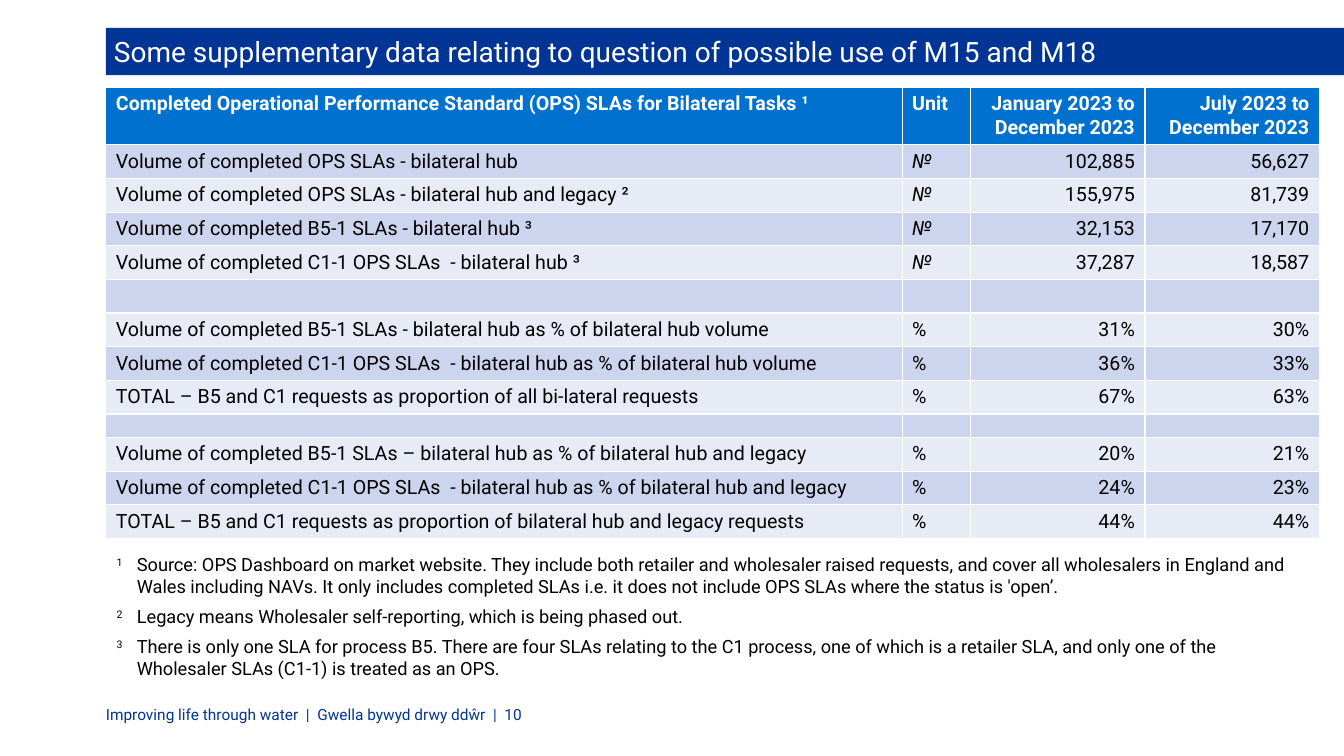
from pptx import Presentation
from pptx.dml.color import RGBColor
from pptx.enum.shapes import MSO_SHAPE
from pptx.enum.text import MSO_ANCHOR, PP_ALIGN
from pptx.oxml.ns import qn
from pptx.util import Pt
from lxml import etree

RECTANGLE = MSO_SHAPE.RECTANGLE
TOP, MIDDLE = MSO_ANCHOR.TOP, MSO_ANCHOR.MIDDLE
LEFT, RIGHT, JUSTIFY = PP_ALIGN.LEFT, PP_ALIGN.RIGHT, PP_ALIGN.JUSTIFY

# Content
TITLE = "Some supplementary data relating to question of possible use of M15 and M18"
HEADER = ("Completed Operational Performance Standard (OPS) SLAs for Bilateral Tasks ¹",
          "Unit", "January 2023 to December 2023", "July 2023 to December 2023")
WIDE_GAP = NARROW_GAP = ("", "", "", "")
VOLUMES = [
    ("Volume of completed OPS SLAs - bilateral hub", "№", "102,885", "56,627"),
    ("Volume of completed OPS SLAs - bilateral hub and legacy ²", "№", "155,975", "81,739"),
    ("Volume of completed B5-1 SLAs - bilateral hub ³", "№", "32,153", "17,170"),
    ("Volume of completed C1-1 OPS SLAs  - bilateral hub ³", "№", "37,287", "18,587"),
]
HUB_SHARES = [
    ("Volume of completed B5-1 SLAs - bilateral hub as % of bilateral hub volume",
     "%", "31%", "30%"),
    ("Volume of completed C1-1 OPS SLAs  - bilateral hub as % of bilateral hub volume",
     "%", "36%", "33%"),
    ("TOTAL – B5 and C1 requests as proportion of all bi-lateral requests",
     "%", "67%", "63%"),
]
LEGACY_SHARES = [
    ("Volume of completed B5-1 SLAs – bilateral hub as % of bilateral hub and legacy",
     "%", "20%", "21%"),
    ("Volume of completed C1-1 OPS SLAs  - bilateral hub as % of bilateral hub and legacy",
     "%", "24%", "23%"),
    ("TOTAL – B5 and C1 requests as proportion of bilateral hub and legacy requests",
     "%", "44%", "44%"),
]
ROWS = [HEADER, *VOLUMES, WIDE_GAP, *HUB_SHARES, NARROW_GAP, *LEGACY_SHARES]
NOTES = [
    "Source: OPS Dashboard on market website. They include both retailer and wholesaler "
    "raised requests, and cover all wholesalers in England and Wales including NAVs. It only "
    "includes completed SLAs i.e. it does not include OPS SLAs where the status is 'open’.",
    "Legacy means Wholesaler self-reporting, which is being phased out.",
    "There is only one SLA for process B5. There are four SLAs relating to the C1 process, "
    "one of which is a retailer SLA, and only one of the Wholesaler SLAs (C1-1) is treated "
    "as an OPS.",
]
FOOTER = "Improving life through water  |  Gwella bywyd drwy ddŵr  |  10"


class Theme:
    font = "Roboto"
    navy, blue = "003595", "0071CE"
    bands = ("E7EBF6", "CCD5ED")
    white, black = "FFFFFF", "000000"
    title, table, note, footer, gap = 20, 14, 13, 11, 8


# Layout, in points
SLIDE_WIDTH, SLIDE_HEIGHT = 960, 540
MARGIN = 75.6
COLUMNS = (568.8, 48.9, 124.6, 124.6)
HEADER_HEIGHT, ROW_HEIGHT, GAP_HEIGHT = 39.6, 23.8, 16.5
NARROW_ROW = len(ROWS) - len(LEGACY_SHARES) - 1
HEIGHTS = [HEADER_HEIGHT] + [ROW_HEIGHT] * (len(ROWS) - 1)
HEIGHTS[NARROW_ROW] = GAP_HEIGHT


def add_text(para, text, size, color=Theme.black, bold=False, italic=False,
             align=LEFT, raised=False):
    para.alignment = align
    span = para.add_run()
    span.text = text
    font = span.font
    font.name, font.size, font.bold, font.italic = Theme.font, Pt(size), bold, italic
    font.color.rgb = RGBColor.from_string(color)
    if raised:
        font._element.set("baseline", "30000")


def set_frame(box, anchor, insets):
    frame = box.text_frame
    frame.word_wrap = True
    frame.vertical_anchor = anchor
    (frame.margin_left, frame.margin_top,
     frame.margin_right, frame.margin_bottom) = map(Pt, insets)
    return frame


def add_panel(page, left, top, width, height, fill, anchor, insets):
    panel = page.shapes.add_shape(RECTANGLE, Pt(left), Pt(top), Pt(width), Pt(height))
    panel.shadow.inherit = False
    panel.fill.solid()
    panel.fill.fore_color.rgb = RGBColor.from_string(fill)
    panel.line.fill.background()
    return set_frame(panel, anchor, insets)


def add_results(page, left, top):
    table = page.shapes.add_table(len(ROWS), len(COLUMNS), Pt(left), Pt(top),
                                  Pt(sum(COLUMNS)), Pt(sum(HEIGHTS))).table
    for column, width in zip(table.columns, COLUMNS):
        column.width = Pt(width)
    for i, values in enumerate(ROWS):
        table.rows[i].height = Pt(HEIGHTS[i])
        heading = i == 0
        for j, value in enumerate(values):
            cell = table.cell(i, j)
            cell.fill.solid()
            cell.fill.fore_color.rgb = RGBColor.from_string(
                Theme.blue if heading else Theme.bands[i % 2])
            para = cell.text_frame.paragraphs[0]
            if value:
                add_text(para, value, Theme.table, bold=heading, italic=value == "№",
                         color=Theme.white if heading else Theme.black,
                         align=RIGHT if j >= 2 else LEFT)
            else:
                # An empty cell takes its height from the end-of-paragraph size
                size = Theme.gap if i == NARROW_ROW else Theme.table
                end = etree.SubElement(para._p, qn("a:endParaRPr"), sz=str(size * 100))
                etree.SubElement(end, qn("a:latin"), typeface=Theme.font)


def add_notes(frame):
    for number, note in enumerate(NOTES, 1):
        para = frame.paragraphs[0] if number == 1 else frame.add_paragraph()
        para.space_after = Pt(6)
        indent = para._p.get_or_add_pPr()
        indent.set("marL", str(Pt(14.4)))
        indent.set("indent", str(-Pt(14.4)))
        add_text(para, str(number), Theme.note, raised=True)
        add_text(para, "\t" + note, Theme.note)


def main():
    deck = Presentation()
    deck.slide_width, deck.slide_height = Pt(SLIDE_WIDTH), Pt(SLIDE_HEIGHT)
    page = deck.slides.add_slide(deck.slide_layouts[6])

    # Footer
    box = page.shapes.add_textbox(Pt(MARGIN), Pt(503.3), Pt(491), Pt(13.7))
    frame = set_frame(box, MIDDLE, (0, 0, 0, 0))
    add_text(frame.paragraphs[0], FOOTER, Theme.footer, Theme.navy, align=JUSTIFY)

    # Title band, running to the right edge
    frame = add_panel(page, MARGIN, 20, SLIDE_WIDTH - MARGIN, 33.8, Theme.navy,
                      MIDDLE, (5.8, 2.9, 28, 2.9))
    add_text(frame.paragraphs[0], TITLE, Theme.title, Theme.white)

    # Table
    add_results(page, MARGIN, 62.6)

    # Footnotes
    frame = add_panel(page, 76.3, 391.7, 861.8, 93.6, Theme.white,
                      TOP, (7.2, 3.6, 7.2, 3.6))
    add_notes(frame)

    deck.save("out.pptx")


if __name__ == "__main__":
    main()
